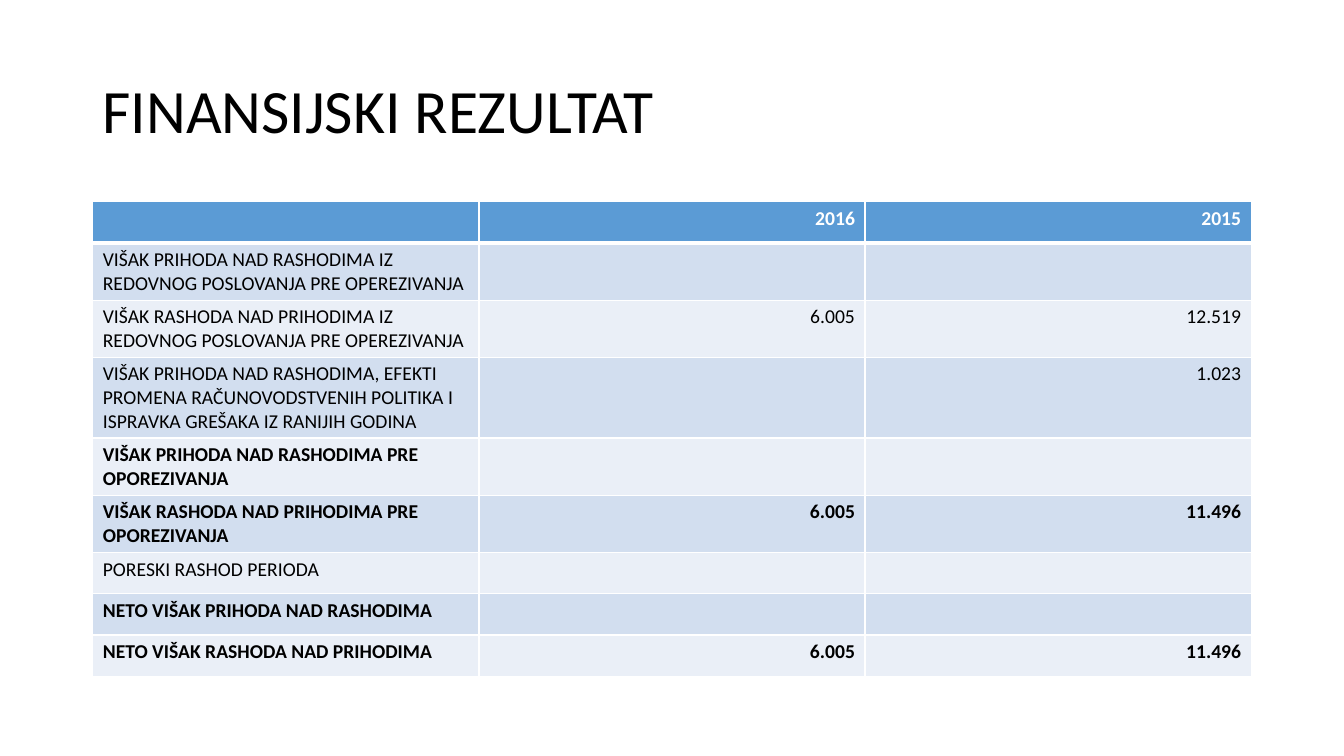
from lxml import etree
from pptx import Presentation
from pptx.dml.color import RGBColor
from pptx.enum.text import MSO_ANCHOR, PP_ALIGN
from pptx.oxml.ns import qn
from pptx.util import Inches, Pt

MIDDLE = MSO_ANCHOR.MIDDLE
LEFT, RIGHT = PP_ALIGN.LEFT, PP_ALIGN.RIGHT

COLORS = {
    "text": "000000",
    "header_text": "FFFFFF",
    "border": "FFFFFF",
    "header": "5B9BD5",
    "odd_row": "D2DEEF",
    "even_row": "EAEFF7",
}
FONT = "Calibri"
SLIDE_WIDTH, SLIDE_HEIGHT = Inches(13.33), Inches(7.5)
MARGIN = Inches(0.92)
CONTENT_WIDTH = SLIDE_WIDTH - 2 * MARGIN
TITLE_TOP, TITLE_HEIGHT = Inches(0.4), Inches(1.45)
TABLE_TOP, ROW_HEIGHT = Inches(2), Inches(0.41)
THIN, THICK = 1, 3

RESULTS = [
    ("", "2016", "2015", True),
    ("VIŠAK PRIHODA NAD RASHODIMA IZ REDOVNOG POSLOVANJA PRE OPEREZIVANJA", "", "", False),
    ("VIŠAK RASHODA NAD PRIHODIMA IZ REDOVNOG POSLOVANJA PRE OPEREZIVANJA", "6.005", "12.519", False),
    ("VIŠAK PRIHODA NAD RASHODIMA, EFEKTI PROMENA RAČUNOVODSTVENIH POLITIKA I "
     "ISPRAVKA GREŠAKA IZ RANIJIH GODINA", "", "1.023", False),
    ("VIŠAK PRIHODA NAD RASHODIMA PRE OPOREZIVANJA", "", "", True),
    ("VIŠAK RASHODA NAD PRIHODIMA PRE OPOREZIVANJA", "6.005", "11.496", True),
    ("PORESKI RASHOD PERIODA", "", "", False),
    ("NETO VIŠAK PRIHODA NAD RASHODIMA", "", "", True),
    ("NETO VIŠAK RASHODA NAD PRIHODIMA", "6.005", "11.496", True),
]


def style_text(paragraph, size, color, bold=False):
    for part in (paragraph, *paragraph.runs):
        part.font.name = FONT
        part.font.size = Pt(size)
        part.font.bold = bold
        part.font.color.rgb = RGBColor.from_string(COLORS[color])


def add_title(slide, title):
    heading = slide.shapes.add_textbox(MARGIN, TITLE_TOP, CONTENT_WIDTH, TITLE_HEIGHT)
    frame = heading.text_frame
    frame.word_wrap = True
    frame.vertical_anchor = MIDDLE
    frame.text = title
    frame.paragraphs[0].line_spacing = 0.9
    style_text(frame.paragraphs[0], 44, "text")


def set_borders(cell, top, bottom):
    properties = cell._tc.get_or_add_tcPr()
    for side, width in (("L", THIN), ("R", THIN), ("T", top), ("B", bottom)):
        line = etree.SubElement(properties, qn(f"a:ln{side}"), w=str(Pt(width)))
        fill = etree.SubElement(line, qn("a:solidFill"))
        etree.SubElement(fill, qn("a:srgbClr"), val=COLORS["border"])


def fill_cell(cell, value, row, column, bold):
    set_borders(cell, THICK if row == 1 else THIN, THICK if row == 0 else THIN)
    band = "header" if row == 0 else "odd_row" if row % 2 else "even_row"
    cell.fill.solid()
    cell.fill.fore_color.rgb = RGBColor.from_string(COLORS[band])
    cell.text_frame.text = value
    paragraph = cell.text_frame.paragraphs[0]
    paragraph.alignment = RIGHT if column else LEFT
    style_text(paragraph, 14, "text" if row else "header_text", bold)


def add_results(slide, results):
    column_count = len(results[0]) - 1
    table = slide.shapes.add_table(
        len(results), column_count, MARGIN, TABLE_TOP,
        CONTENT_WIDTH, ROW_HEIGHT * len(results),
    ).table
    for row, (*values, bold) in enumerate(results):
        for column, value in enumerate(values):
            fill_cell(table.cell(row, column), value, row, column, bold)


def main():
    presentation = Presentation()
    presentation.slide_width = SLIDE_WIDTH
    presentation.slide_height = SLIDE_HEIGHT
    slide = presentation.slides.add_slide(presentation.slide_layouts[6])
    add_title(slide, "FINANSIJSKI REZULTAT")
    add_results(slide, RESULTS)
    presentation.save("out.pptx")


if __name__ == "__main__":
    main()
